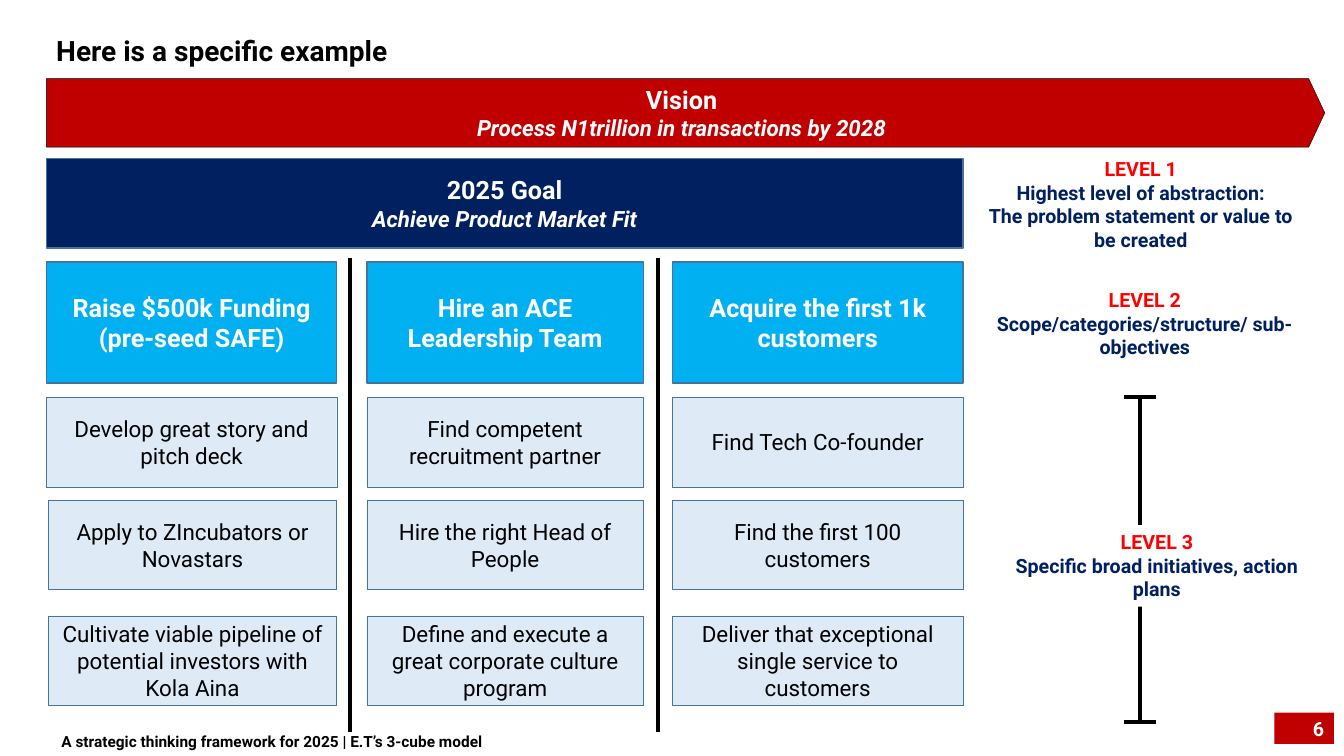
from lxml.etree import SubElement
from pptx import Presentation
from pptx.dml.color import RGBColor
from pptx.enum.shapes import MSO_CONNECTOR, MSO_SHAPE
from pptx.enum.text import MSO_ANCHOR, PP_ALIGN
from pptx.oxml.ns import qn
from pptx.util import Inches, Pt

TITLE = "Here is a specific example"
VISION = ("Vision", "Process N1trillion in transactions by 2028")
GOAL = ("2025 Goal", "Achieve Product Market Fit")
PILLARS = [
    ("Raise $500k Funding (pre-seed SAFE)", [
        "Develop great story and pitch deck",
        "Apply to ZIncubators or Novastars",
        "Cultivate viable pipeline of potential investors with Kola Aina"]),
    ("Hire an ACE Leadership Team", [
        "Find competent recruitment partner",
        "Hire the right Head of People",
        "Define and execute a great corporate culture program"]),
    ("Acquire the first 1k customers", [
        "Find Tech Co-founder",
        "Find the first 100 customers",
        "Deliver that exceptional single service to customers"]),
]
LEVELS = [
    (("LEVEL 1", "Highest level of abstraction:",
      "The problem statement or value to be created"), (9.65, 1.51, 3.33, 1.04)),
    (("LEVEL 2", "Scope/categories/structure/ sub-objectives"), (9.69, 2.81, 3.33, 0.81)),
    (("LEVEL 3", "Specific broad initiatives, action plans"), (9.81, 5.21, 3.33, 0.81)),
]
FOOTER = "A strategic thinking framework for 2025 | E.T’s 3-cube model"
PAGE_NUMBER = "6"

COLORS = {"black": "000000", "white": "FFFFFF", "red": "FF0000", "crimson": "C00000",
          "navy": "002060", "sky": "00B0F0", "pale": "DEEBF7", "edge": "43739E"}
FONT = "Roboto"
LEFT = 0.46
COLUMNS = [(LEFT, 2.88), (3.64, 2.74), (6.67, 2.88)]
GOAL_WIDTH = sum(COLUMNS[-1]) - LEFT
PILLAR_TOP, PILLAR_HEIGHT = 2.6, 1.2
ACTION_TOPS, ACTION_HEIGHT = [3.94, 4.96, 6.11], 0.89
LOWER_INDENT = 0.02
DIVIDER_TOP, DIVIDER_HEIGHT = 2.56, 4.7
BRACKET_X, BRACKET_TOP, BRACKET_BOTTOM, BRACKET_CAP = 11.31, 3.94, 7.16, 0.16

deck = Presentation()
deck.slide_width, deck.slide_height = Inches(13.33), Inches(7.5)
page = deck.slides.add_slide(deck.slide_layouts[6])


def color(name):
    return RGBColor.from_string(COLORS[name])


def write(box, lines, size=16, ink="black", bold=False, align=PP_ALIGN.CENTER,
          anchor=MSO_ANCHOR.MIDDLE, styles=()):
    frame = box.text_frame
    frame.word_wrap = True
    frame.vertical_anchor = anchor
    for index, line in enumerate(lines):
        style = styles[index] if index < len(styles) else {}
        para = frame.paragraphs[0] if index == 0 else frame.add_paragraph()
        para.alignment = align
        span = para.add_run()
        span.text = line
        span.font.name = FONT
        span.font.size = Pt(style.get("size", size))
        span.font.bold = bold
        span.font.italic = style.get("italic", False)
        span.font.color.rgb = color(style.get("ink", ink))


def add_label(area, lines, **text_format):
    box = page.shapes.add_textbox(*map(Inches, area))
    write(box, lines, bold=True, anchor=MSO_ANCHOR.TOP, **text_format)
    return box


def add_block(area, fill, lines, kind=MSO_SHAPE.RECTANGLE, point=None,
              edge=None, weight=0.25, **text_format):
    box = page.shapes.add_shape(kind, *map(Inches, area))
    box.shadow.inherit = False
    if point is not None:
        box.adjustments[0] = point
    box.fill.solid()
    box.fill.fore_color.rgb = color(fill)
    if edge:
        box.line.color.rgb = color(edge)
        box.line.width = Pt(weight)
    else:
        box.line.fill.background()
    write(box, lines, **text_format)


def add_rule(*ends):
    rule = page.shapes.add_connector(MSO_CONNECTOR.STRAIGHT, *map(Inches, ends))
    rule.line.color.rgb = color("black")
    rule.line.width = Pt(3)
    SubElement(rule.element.spPr, qn("a:effectLst"))


banner = {"size": 18, "ink": "white", "bold": True,
          "styles": ({}, {"size": 16, "italic": True})}
heading = {"size": 18, "ink": "white", "bold": True, "edge": "edge", "weight": 1, "point": 0}

add_label((LEFT, 0.28, 12.37, 0.44), [TITLE], size=20, align=PP_ALIGN.LEFT)
add_block((LEFT, 0.78, 12.68, 0.68), "crimson", VISION, kind=MSO_SHAPE.PENTAGON,
          point=0.234, edge="black", **banner)
add_block((LEFT, 1.57, GOAL_WIDTH, 0.89), "navy", GOAL, kind=MSO_SHAPE.PENTAGON,
          point=0, edge="edge", weight=1, **banner)

for column, ((left, width), (pillar, actions)) in enumerate(zip(COLUMNS, PILLARS)):
    kind = MSO_SHAPE.CHEVRON if column else MSO_SHAPE.PENTAGON
    add_block((left, PILLAR_TOP, width, PILLAR_HEIGHT), "sky", [pillar], kind=kind, **heading)
    for row, (top, action) in enumerate(zip(ACTION_TOPS, actions)):
        indent = LOWER_INDENT if row and not column else 0
        add_block((left + indent, top, width - indent, ACTION_HEIGHT), "pale", [action],
                  edge="edge")

for x in (3.47, 6.53):
    add_rule(x, DIVIDER_TOP, x, DIVIDER_TOP + DIVIDER_HEIGHT)

add_rule(BRACKET_X, BRACKET_TOP, BRACKET_X, BRACKET_BOTTOM)
for y in (BRACKET_TOP, BRACKET_BOTTOM):
    add_rule(BRACKET_X - BRACKET_CAP, y, BRACKET_X + BRACKET_CAP, y)

for lines, area in LEVELS:
    label = add_label(area, lines, size=14, ink="navy", styles=({"ink": "red"},))
label.fill.solid()
label.fill.fore_color.rgb = color("white")

add_block((12.64, 7.07, 0.59, 0.31), "crimson", [PAGE_NUMBER], size=14, ink="white",
          bold=True, align=PP_ALIGN.RIGHT)
add_label((0.51, 7.21, 5.77, 0.29), [FOOTER], size=11, align=PP_ALIGN.LEFT)

deck.save("out.pptx")
